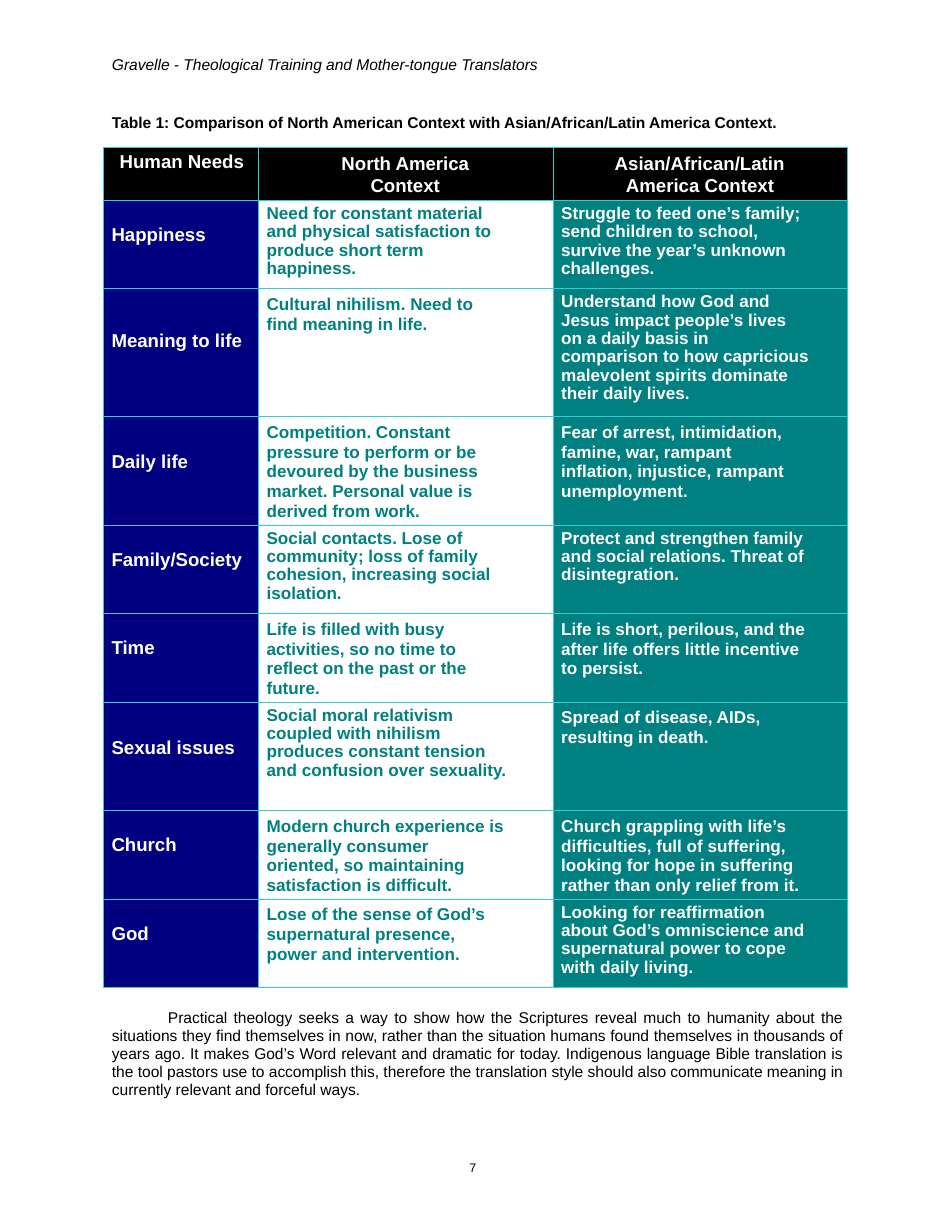
from lxml import etree
from pptx import Presentation
from pptx.dml.color import RGBColor
from pptx.enum import text
from pptx.oxml import ns
from pptx.util import Pt

BLACK = RGBColor(0x00, 0x00, 0x00)
WHITE = RGBColor(0xFF, 0xFF, 0xFF)
NAVY = RGBColor(0x00, 0x00, 0x80)
TEAL = RGBColor(0x00, 0x80, 0x80)
AQUA = RGBColor(0x33, 0xCC, 0xCC)

TIGHT, EXACT = 0.96, Pt(12.7)
TOP = {TIGHT: 2.9, EXACT: 3.6}
NA_RIGHT, MAJORITY_RIGHT = 29.5, 24  # right margins of the two context columns


class Page:
    def __init__(self, prs, font="Arial"):
        self.s = prs.slides.add_slide(prs.slide_layouts[6])
        self.font = font

    def paragraph(self, p, words, size, color=BLACK, bold=False, italic=False,
                  left=0, first=0, before=0, line=None, align=None):
        p.text = words
        for f in [p.font] + [r.font for r in p.runs]:
            f.name, f.size, f.bold, f.italic = self.font, Pt(size), bold, italic
            f.color.rgb = color
        pPr = p._p.get_or_add_pPr()
        pPr.set("marL", str(Pt(left)))
        pPr.set("indent", str(Pt(first)))
        p.space_before = Pt(before)
        if line:
            p.line_spacing = line
        if align:
            p.alignment = align

    def box(self, x, y, w, h, paragraphs, top=0):
        tf = self.s.shapes.add_textbox(Pt(x), Pt(y), Pt(w), Pt(h)).text_frame
        tf.word_wrap = True
        tf.margin_left = tf.margin_right = tf.margin_bottom = 0
        tf.margin_top = Pt(top)
        for i, style in enumerate(paragraphs):
            p = tf.add_paragraph() if i else tf.paragraphs[0]
            self.paragraph(p, **style)

    def table(self, x, y, widths, heights):
        frame = self.s.shapes.add_table(len(heights), len(widths), Pt(x), Pt(y),
                                        Pt(sum(widths)), Pt(sum(heights)))
        t = frame.table
        t.first_row = t.horz_banding = False
        for col, w in zip(t.columns, widths):
            col.width = Pt(w)
        for row, h in zip(t.rows, heights):
            row.height = Pt(h)
        return t

    def cell(self, c, words, size, color, fill=None, top=0, right=0, **style):
        c.margin_left = c.margin_bottom = 0
        c.margin_top, c.margin_right = Pt(top), Pt(right)
        self.border(c)
        if fill is None:
            c.fill.background()
        else:
            c.fill.solid()
            c.fill.fore_color.rgb = fill
        self.paragraph(c.text_frame.paragraphs[0], words, size, color, bold=True, **style)

    def border(self, c):
        tcPr = c._tc.get_or_add_tcPr()
        for side in ("a:lnL", "a:lnR", "a:lnT", "a:lnB"):
            ln = etree.SubElement(tcPr, ns.qn(side), w=str(Pt(0.5)))
            fill = etree.SubElement(ln, ns.qn("a:solidFill"))
            etree.SubElement(fill, ns.qn("a:srgbClr"), val=str(AQUA))


# Column heads: words, top margin, right margin, indents, line spacing
HEADS = [
    ("Human Needs", 2.2, 0, 10.4, 0, None),
    ("North America Context", 3.6, NA_RIGHT, 72, -18.7, Pt(13.8)),
    ("Asian/African/Latin America Context", 3.6, 0, 46.8, -7.2, Pt(13.8)),
]

# Rows: height, need, top margin of the need, then line spacing and words per context
ROWS = [
    (56.9, "Happiness", 15.6,
     TIGHT, "Need for constant material and physical satisfaction to produce "
     "short term happiness.",
     TIGHT, "Struggle to feed one’s family; send children to school, survive "
     "the year’s unknown challenges."),
    (82.1, "Meaning to life", 27,
     EXACT, "Cultural nihilism. Need to find meaning in life.",
     TIGHT, "Understand how God and Jesus impact people’s lives on a daily basis "
     "in comparison to how capricious malevolent spirits dominate their daily lives."),
    (69.8, "Daily life", 22.5,
     EXACT, "Competition. Constant pressure to perform or be devoured by the "
     "business market. Personal value is derived from work.",
     EXACT, "Fear of arrest, intimidation, famine, war, rampant\v"
     "inflation, injustice, rampant unemployment."),
    (56.9, "Family/Society", 15.6,
     TIGHT, "Social contacts. Lose of community; loss of family cohesion, "
     "increasing social isolation.",
     TIGHT, "Protect and strengthen family and social relations. Threat of "
     "disintegration."),
    (56.9, "Time", 15.6,
     EXACT, "Life is filled with busy activities, so no time to reflect on the "
     "past or the future.",
     EXACT, "Life is short, perilous, and the after life offers little incentive "
     "to persist."),
    (69.8, "Sexual issues", 22.5,
     TIGHT, "Social moral relativism coupled with nihilism produces constant "
     "tension and confusion over sexuality.",
     EXACT, "Spread of disease, AIDs, resulting in death."),
    (56.9, "Church", 15.6,
     EXACT, "Modern church experience is generally consumer\v"
     "oriented, so maintaining satisfaction is difficult.",
     EXACT, "Church grappling with life’s difficulties, full of suffering, "
     "looking for hope in suffering rather than only relief from it."),
    (56.9, "God", 15.6,
     EXACT, "Lose of the sense of God’s supernatural presence, power and "
     "intervention.",
     TIGHT, "Looking for reaffirmation about God’s omniscience and supernatural "
     "power to cope with daily living."),
]


def main():
    prs = Presentation()
    prs.slide_width, prs.slide_height = Pt(612), Pt(792)
    page = Page(prs)

    # Page number
    page.box(298.8, 745.9, 15.8, 10.8, [dict(words="7", size=8, left=2.9)])

    # Running head and table caption
    page.box(71.3, 34.6, 504, 50.4, [
        dict(words="Gravelle - Theological Training and Mother-tongue Translators",
             size=10, italic=True, left=0.7, before=1),
        dict(words="Table 1: Comparison of North American Context with "
             "Asian/African/Latin America Context.",
             size=10, bold=True, left=0.7, before=25.5),
    ], top=0.7)

    # Comparison table
    t = page.table(66.5, 95, [99.7, 189.4, 189.4], [33.8] + [row[0] for row in ROWS])
    for j, (words, top, right, left, first, line) in enumerate(HEADS):
        page.cell(t.cell(0, j), words, 12, WHITE, BLACK, top, right,
                  left=left, first=first, line=line)
    for i, (_, need, top, na_line, na, majority_line, majority) in enumerate(ROWS, 1):
        page.cell(t.cell(i, 0), need, 12, WHITE, NAVY, top, left=5.2)
        page.cell(t.cell(i, 1), na, 11, TEAL, None, TOP[na_line], NA_RIGHT,
                  left=5.2, line=na_line)
        page.cell(t.cell(i, 2), majority, 11, WHITE, TEAL, TOP[majority_line],
                  MAJORITY_RIGHT, left=5.2, line=majority_line)

    # Closing paragraph
    page.box(71.3, 647.3, 470.2, 59.8, [dict(
        words="Practical theology seeks a way to show how the Scriptures reveal much to "
        "humanity about the situations they find themselves in now, rather than the "
        "situation humans found themselves in thousands of years ago. It makes God’s "
        "Word relevant and dramatic for today. Indigenous language Bible translation is "
        "the tool pastors use to accomplish this, therefore the translation style should "
        "also communicate meaning in currently relevant and forceful ways.",
        size=10, left=0.7, first=36, before=1.5, line=TIGHT,
        align=text.PP_ALIGN.JUSTIFY)], top=1.4)

    prs.save("out.pptx")


if __name__ == "__main__":
    main()
